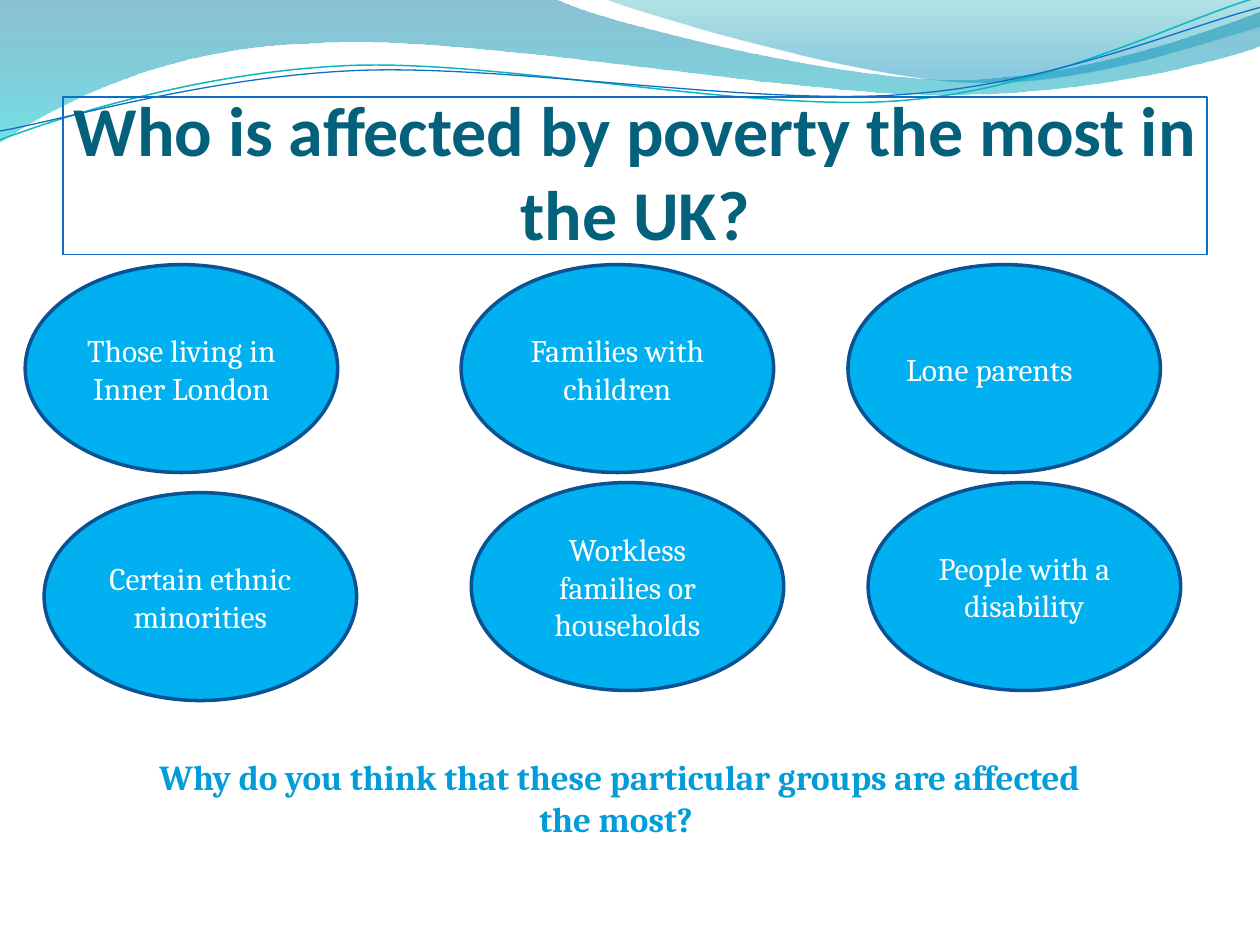
import math

import pptx
import pptx.util
import pptx.dml.color
import pptx.enum.shapes
import pptx.enum.text
import pptx.oxml
import pptx.oxml.ns

Inches, Pt = pptx.util.Inches, pptx.util.Pt
ALIGN = pptx.enum.text.PP_ALIGN
ANCHOR = pptx.enum.text.MSO_ANCHOR
qn, nsdecls = pptx.oxml.ns.qn, pptx.oxml.ns.nsdecls

# Content
TITLE = "Who is affected by poverty the most in the UK?"
QUESTION = "Why do you think that these particular groups are affected the most? "
GROUPS = [  # text, left, top, alignment
    ("Those living in Inner London", 0.2, 2.1, ALIGN.CENTER),
    ("Families with children", 3.66, 2.1, ALIGN.CENTER),
    ("Lone parents", 6.73, 2.1, ALIGN.LEFT),
    ("Workless families or households", 3.74, 3.83, ALIGN.CENTER),
    ("Certain ethnic minorities", 0.35, 3.91, ALIGN.CENTER),
    ("People with a disability", 6.89, 3.83, ALIGN.CENTER),
]
GROUP_SIZE = (2.48, 1.65)

COLORS = {
    "title": "04617B", "frame": "0F6FC6", "teal_line": "0AB8BF",
    "oval": "00B0F0", "oval_edge": "0B5292", "oval_text": "FFFFFF",
    "question": "009DD9",
    "wave_top": "0074A1", "wave_bottom": "00C6CF",
    "crest_top": "00A1A9", "crest_bottom": "008BBF",
}

# Curves: a start point, then segments of one point (line) or three (Bezier)
WAVES = [  # start, segments, gradient stops (position, colour, opacity)
    ((0, 0),
     [((4.4, -0.01),),
      ((4.76, 0.17), (6.64, 0.63), (7.58, 0.63)),
      ((8.53, 0.63), (9.58, 0.26), (10, 0.09)),
      ((10.01, 0.36),),
      ((9.83, 0.44), (8.7, 0.76), (7.46, 0.75)),
      ((6.22, 0.75), (3.82, 0.28), (2.57, 0.34)),
      ((1.29, 0.36), (0.46, 0.83), (-0.01, 1.13))],
     [(0, "wave_top", 45), (1, "wave_bottom", 55)]),
    ((4.79, -0.01),
     [((5.09, 0.11), (6.82, 0.62), (7.69, 0.65)),
      ((8.56, 0.69), (9.61, 0.32), (10, 0.21)),
      ((10, 0),)],
     [(0, "crest_top", 30), (0.8, "crest_bottom", 45)]),
]
RIBBONS = [  # start, segments, centre, colour, width
    ((0, 1.11),
     [((0.48, 0.93), (1.58, 0.57), (2.77, 0.52)),
      ((3.95, 0.47), (5.93, 0.89), (7.13, 0.8)),
      ((8.33, 0.71), (9.38, 0.15), (9.98, -0.02))],
     (4.99, 0.58), "teal_line", 0.85),
    ((0, 1.04),
     [((0.47, 0.96), (1.64, 0.61), (2.83, 0.56)),
      ((4.03, 0.51), (5.97, 0.84), (7.17, 0.75)),
      ((8.36, 0.67), (9.41, 0.21), (10, 0.06))],
     (5, 0.59), "frame", 0.75),
]
RIBBON_TILT = -2.7


def rgb(name):
    return pptx.dml.color.RGBColor.from_string(COLORS[name])


def turn(point, centre, degrees):
    angle = math.radians(degrees)
    dx, dy = point[0] - centre[0], point[1] - centre[1]
    return (centre[0] + dx * math.cos(angle) - dy * math.sin(angle),
            centre[1] + dx * math.sin(angle) + dy * math.cos(angle))


def add_curve(slide, start, segments, close, tilt=0, centre=(0, 0)):
    points = [start] + [point for segment in segments for point in segment]
    level = [turn(point, centre, -tilt) for point in points]
    first, *rest = [(Inches(x), Inches(y)) for x, y in level]
    builder = slide.shapes.build_freeform(*first)
    builder.add_line_segments(rest, close=close)
    curve = builder.convert_to_shape()
    curve.rotation = tilt
    curve.shadow.inherit = False

    # Join each three-point segment into one Bezier
    corners = iter(list(curve._element.iter(qn("a:lnTo"))))
    for segment in segments:
        lines = [next(corners) for _ in segment]
        if len(lines) == 3:
            bezier = pptx.oxml.parse_xml(f'<a:cubicBezTo {nsdecls("a")}/>')
            lines[0].addprevious(bezier)
            for line in lines:
                bezier.append(line[0])
                line.getparent().remove(line)
    return curve


def set_line(shape, color, width):
    shape.line.color.rgb = rgb(color)
    shape.line.width = Pt(width)


def set_gradient(shape, stops):
    shape.fill.gradient()
    shape.fill.gradient_angle = 270
    for stop, (position, color, _) in zip(shape.fill.gradient_stops, stops):
        stop.position = position
        stop.color.rgb = rgb(color)
    colors = shape._element.spPr.iter(qn("a:srgbClr"))
    for element, (_, _, opacity) in zip(colors, stops):
        element.append(pptx.oxml.parse_xml(
            f'<a:alpha {nsdecls("a")} val="{opacity * 1000}"/>'))


def write(shape, text, font, size, color, bold=False, align=ALIGN.CENTER,
          anchor=ANCHOR.MIDDLE):
    frame = shape.text_frame
    frame.word_wrap = True
    frame.vertical_anchor = anchor
    frame.text = text
    paragraph = frame.paragraphs[0]
    paragraph.alignment = align
    run_font = paragraph.runs[0].font
    run_font.name, run_font.size, run_font.bold = font, Pt(size), bold
    run_font.color.rgb = rgb(color)


def add_preset(slide, kind, left, top, width, height):
    shape = slide.shapes.add_shape(kind, *map(Inches, (left, top, width, height)))
    shape.shadow.inherit = False
    return shape


def main():
    prs = pptx.Presentation()
    prs.slide_width, prs.slide_height = Inches(10), Inches(7.5)
    slide = prs.slides.add_slide(prs.slide_layouts[6])
    shapes = pptx.enum.shapes.MSO_SHAPE

    # Waves and ribbons along the top
    for start, segments, stops in WAVES:
        wave = add_curve(slide, start, segments, close=True)
        set_gradient(wave, stops)
        wave.line.fill.background()
    for start, segments, centre, color, width in RIBBONS:
        ribbon = add_curve(slide, start, segments, False, RIBBON_TILT, centre)
        ribbon.fill.background()
        set_line(ribbon, color, width)

    # Framed title
    title = add_preset(slide, shapes.RECTANGLE, 0.5, 0.77, 9.08, 1.25)
    title.fill.background()
    set_line(title, "frame", 0.75)
    frame = title.text_frame
    frame.margin_left = frame.margin_right = frame.margin_bottom = 0
    frame.margin_top = Inches(0.05)
    write(title, TITLE, "Calibri", 40, "title", bold=True, anchor=ANCHOR.BOTTOM)

    # Affected groups
    for text, left, top, align in GROUPS:
        oval = add_preset(slide, shapes.OVAL, left, top, *GROUP_SIZE)
        oval.fill.solid()
        oval.fill.fore_color.rgb = rgb("oval")
        set_line(oval, "oval_edge", 2)
        write(oval, text, "Cambria", 18, "oval_text", align=align)

    # Closing question
    question = slide.shapes.add_textbox(*map(Inches, (1.06, 5.95, 7.72, 0.77)))
    write(question, QUESTION, "Cambria", 20, "question", bold=True, anchor=ANCHOR.TOP)

    prs.save("out.pptx")


if __name__ == "__main__":
    main()
